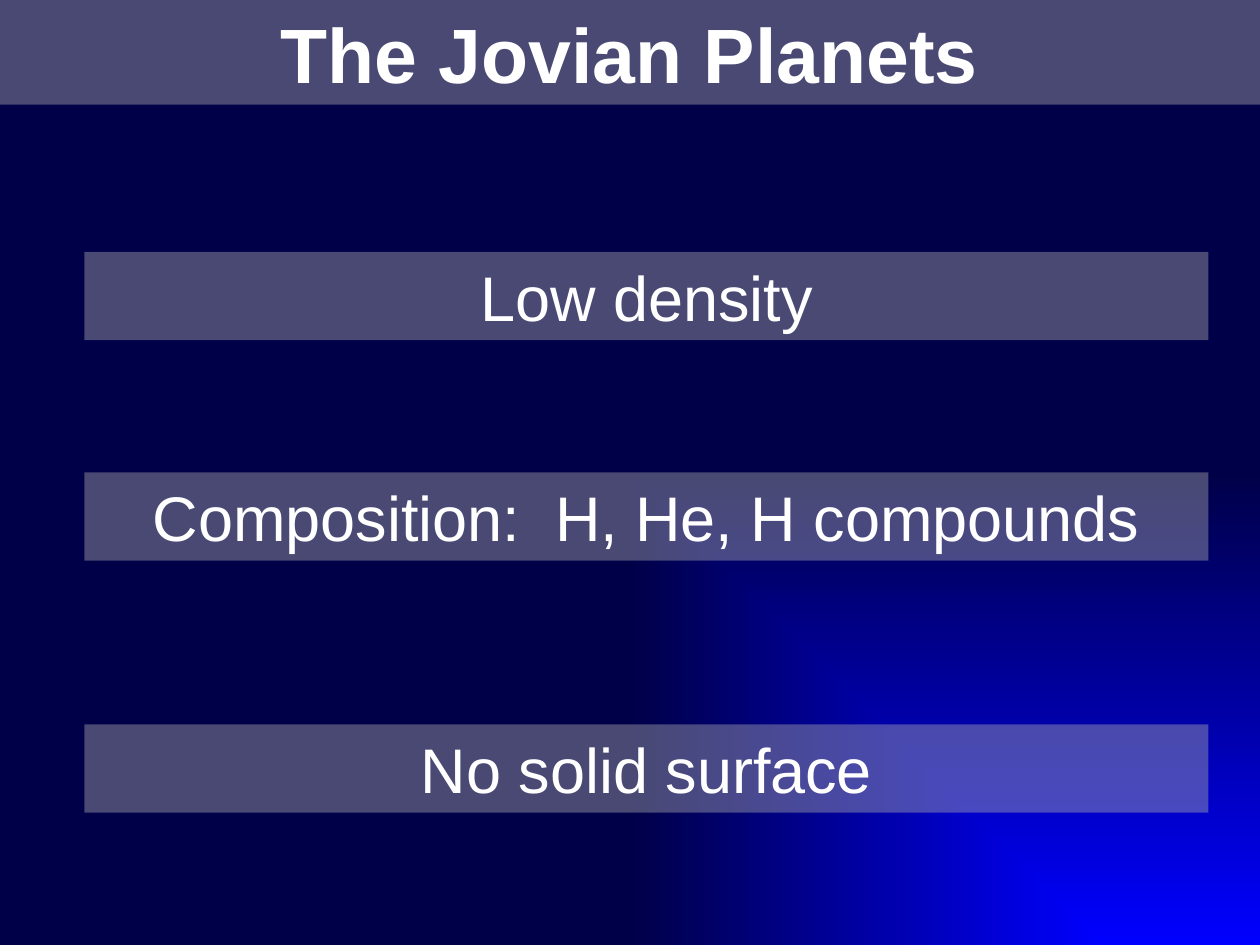
from lxml import etree
from pptx import Presentation
from pptx.dml.color import RGBColor
from pptx.enum import shapes, text
from pptx.oxml.ns import qn
from pptx.util import Inches, Pt

COLORS = {"glow": "0000FF", "night": "000049", "band": "B2B2B2", "text": "FFFFFF"}
FACTS = [
    (2, "Low density"),
    (3.75, "Composition:  H, He, H compounds"),
    (5.75, "No solid surface"),
]


def format_band(box, words, size, bold=False):
    """Fill a box with translucent grey and centre one line of text in it."""
    box.fill.solid()
    box.fill.fore_color.rgb = RGBColor.from_string(COLORS["band"])
    color = box.fill._xPr.find(".//" + qn("a:srgbClr"))
    etree.SubElement(color, qn("a:alpha"), val="41000")
    box.line.fill.background()

    frame = box.text_frame
    frame.text = words
    frame.word_wrap = True
    frame.auto_size = text.MSO_AUTO_SIZE.NONE
    frame.vertical_anchor = text.MSO_ANCHOR.MIDDLE
    para = frame.paragraphs[0]
    para.alignment = text.PP_ALIGN.CENTER
    para.font.name = "Arial"
    para.font.size = Pt(size)
    para.font.bold = bold
    para.font.color.rgb = RGBColor.from_string(COLORS["text"])


deck = Presentation()
deck.slide_width, deck.slide_height = Inches(10), Inches(7.5)
page = deck.slides.add_slide(deck.slide_layouts[5])

# Background glow spreading from the bottom right corner
backdrop = page.background.fill
backdrop.gradient()
for stop, name, position in zip(backdrop.gradient_stops, ("glow", "night"), (0, 1)):
    stop.color.rgb = RGBColor.from_string(COLORS[name])
    stop.position = position
gradient = page.element.find(".//" + qn("p:bgPr")).find(qn("a:gradFill"))
direction = gradient.find(qn("a:lin"))
corner = etree.Element(qn("a:path"), path="rect")
etree.SubElement(corner, qn("a:fillToRect"), l="100000", t="100000")
gradient.replace(direction, corner)

title = page.shapes.title
title.left, title.top = Inches(0), Inches(0)
title.width, title.height = Inches(10), Inches(0.83)
format_band(title, "The Jovian Planets", 44, bold=True)

for top, fact in FACTS:
    band = page.shapes.add_shape(
        shapes.MSO_SHAPE.RECTANGLE, Inches(0.67), Inches(top), Inches(8.92), Inches(0.7)
    )
    band.shadow.inherit = False
    format_band(band, fact, 36)
    band.text_frame.auto_size = text.MSO_AUTO_SIZE.SHAPE_TO_FIT_TEXT

deck.save("out.pptx")
